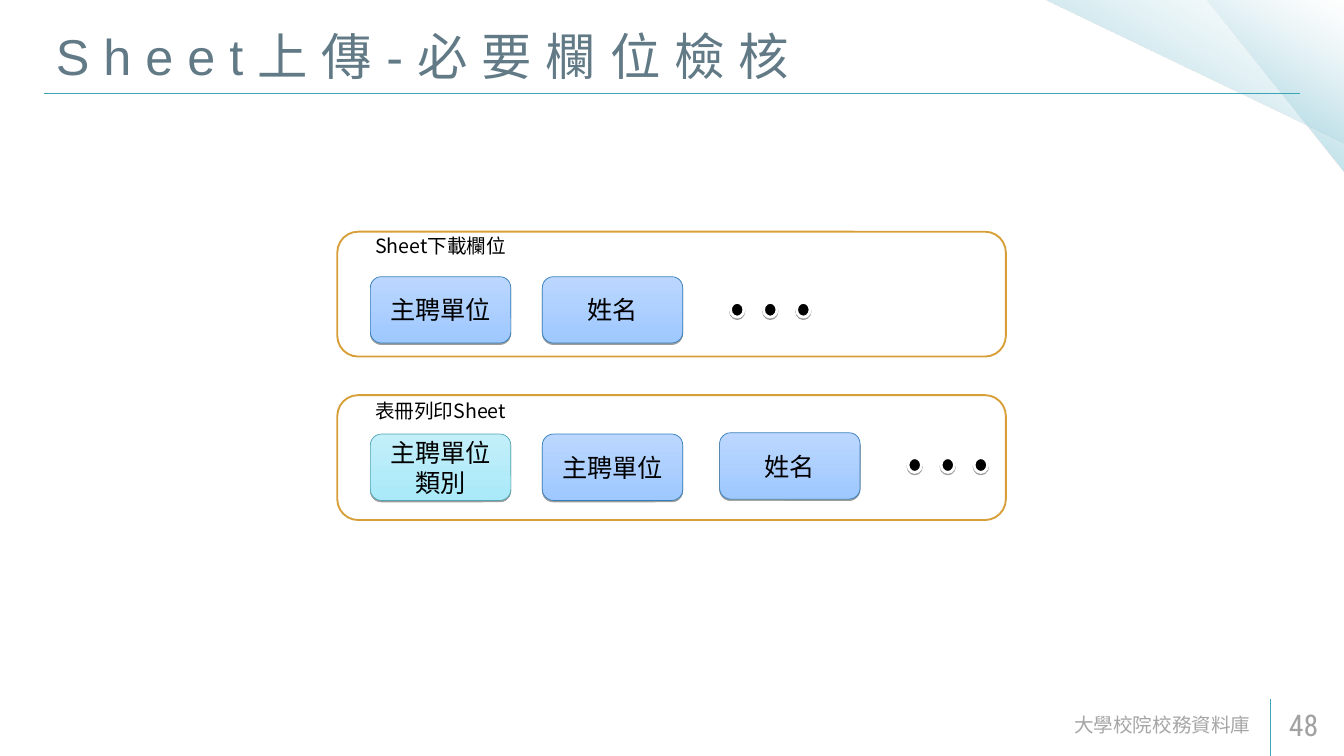
"""Builds the slide that compares the downloaded fields with the printed report fields."""
from lxml.etree import SubElement
from pptx import Presentation
from pptx.dml.color import RGBColor
from pptx.enum.shapes import MSO_CONNECTOR, MSO_SHAPE as Preset
from pptx.enum.text import MSO_ANCHOR as Anchor, PP_ALIGN as Align
from pptx.oxml.ns import qn
from pptx.util import Cm, Pt

rgb = RGBColor.from_string
CJK_FONT = "Noto Sans CJK SC"


def fill_gradient(shape, stops, angle):
    shape.fill.gradient()
    gradient = shape._element.spPr.find(qn("a:gradFill"))
    for child in list(gradient):
        gradient.remove(child)
    gradient.set("rotWithShape", "1")
    stop_list = SubElement(gradient, qn("a:gsLst"))
    for position, color, opacity in stops:
        stop = SubElement(stop_list, qn("a:gs"), pos=str(position * 1000))
        tint = SubElement(stop, qn("a:srgbClr"), val=color)
        SubElement(tint, qn("a:alpha"), val=str(opacity * 1000))
    SubElement(gradient, qn("a:lin"), ang=str(angle * 60000), scaled="0")


def write(shape, lines, font, size, color, align, anchor, insets, spacing=0):
    frame = shape.text_frame
    frame.word_wrap = True
    frame.vertical_anchor = anchor
    frame.margin_left = frame.margin_right = Cm(insets[0])
    frame.margin_top = frame.margin_bottom = Cm(insets[1])
    for index, line in enumerate(lines):
        paragraph = frame.paragraphs[0] if index == 0 else frame.add_paragraph()
        paragraph.alignment = align
        run = paragraph.add_run()
        run.text = line
        run.font.name = font
        run.font.size = Pt(size)
        run.font.color.rgb = rgb(color)
        properties = run.font._element
        properties.set("spc", str(spacing * 100))
        east_asian = SubElement(properties, qn("a:ea"), typeface=CJK_FONT)
        properties.find(qn("a:latin")).addnext(east_asian)


deck = Presentation()
deck.slide_width, deck.slide_height = Cm(50.8), Cm(28.58)
slide = deck.slides.add_slide(deck.slide_layouts[5])
shapes = slide.shapes

for left, width, height in [(45.62, 5.18, 6.53), (39.47, 11.38, 5.41)]:
    corner = shapes.add_shape(Preset.RIGHT_TRIANGLE, Cm(left), 0, Cm(width), Cm(height))
    corner.rotation = 180
    corner.shadow.inherit = False
    corner.line.fill.background()
    fill_gradient(corner, [(0, "97D1E0", 100), (50, "AAD7E2", 44), (100, "E0F0F4", 0)], 120)

for x1, y1, x2, y2 in [(1.68, 3.53, 49.12, 3.53), (48.03, 28.58, 48.03, 26.42)]:
    rule = shapes.add_connector(MSO_CONNECTOR.STRAIGHT, Cm(x1), Cm(y1), Cm(x2), Cm(y2))
    rule.line.color.rgb = rgb("3DA4B5")
    rule.line.width = Pt(1)
    SubElement(rule._element.spPr, qn("a:effectLst"))

title = shapes.title
title.left, title.top, title.width, title.height = Cm(1.65), Cm(0.53), Cm(46.51), Cm(3.12)
write(title, ["Sheet上傳-必要欄位檢核"], "Arial", 54, "617A86",
      Align.LEFT, Anchor.MIDDLE, (0.46, 0.23), 15)

for left, width, words, font, size, color, align in [
    (26.14, 21.59, "大學校院校務資料庫", "Roboto", 21, "A6A6A6", Align.RIGHT),
    (48.26, 2.51, "48", "Roboto Condensed", 32, "A2A2A2", Align.LEFT),
]:
    footer = shapes.add_textbox(Cm(left), Cm(26.64), Cm(width), Cm(1.52))
    write(footer, [words], font, size, color, align, Anchor.MIDDLE, (0.46, 0.23))

BLUE = ("9EC8FF", "BCD7FF", "357EB9")
CYAN = ("A9E9F9", "C3EFF9", "53A5B3")
groups = [
    (8.76, "Sheet下載欄位", 8.76,
     [(14, 10.46, ["主聘單位"], BLUE), (20.5, 10.46, ["姓名"], BLUE)],
     27.61, 11.43),
    (14.94, "表冊列印Sheet", 14.99,
     [(14, 16.41, ["主聘單位", "類別"], CYAN), (20.5, 16.41, ["主聘單位"], BLUE),
      (27.2, 16.36, ["姓名"], BLUE)],
     34.32, 17.3),
]
raised = []
for panel_top, label, label_top, fields, dots_left, dots_top in groups:
    panel = shapes.add_shape(Preset.ROUNDED_RECTANGLE, Cm(12.75), Cm(panel_top), Cm(25.27), Cm(4.72))
    panel.shadow.inherit = False
    panel.fill.solid()
    panel.fill.fore_color.rgb = rgb("FFFFFF")
    panel.line.color.rgb = rgb("D89F39")
    panel.line.width = Pt(2)

    for left, top, lines, (lower, upper, border) in fields:
        field = shapes.add_shape(Preset.ROUNDED_RECTANGLE, Cm(left), Cm(top), Cm(5.31), Cm(2.51))
        fill_gradient(field, [(0, lower, 100), (100, upper, 100)], 270)
        field.line.color.rgb = rgb(border)
        field.line.width = Pt(0.75)
        write(field, lines, CJK_FONT, 27, "000000", Align.CENTER, Anchor.MIDDLE, (0.18, 0.1))
        raised.append(field)

    for step in range(3):
        dot = shapes.add_shape(Preset.OVAL, Cm(dots_left + step * 1.25), Cm(dots_top), Cm(0.51), Cm(0.56))
        dot.fill.solid()
        dot.fill.fore_color.rgb = rgb("000000")
        dot.line.color.rgb = rgb("FFFFFF")
        dot.line.width = Pt(3)
        raised.append(dot)

    caption = shapes.add_textbox(Cm(14), Cm(label_top), Cm(6.93), Cm(1.09))
    write(caption, [label], CJK_FONT, 21, "000000", Align.LEFT, Anchor.TOP, (0.18, 0.1))

for shape in raised:
    effects = SubElement(shape._element.spPr, qn("a:effectLst"))
    shadow = SubElement(effects, qn("a:outerShdw"), blurRad="0", dist=str(Pt(1.6)),
                        dir="5400000", rotWithShape="0")
    shade = SubElement(shadow, qn("a:srgbClr"), val="000000")
    SubElement(shade, qn("a:alpha"), val="38000")

deck.save("out.pptx")
